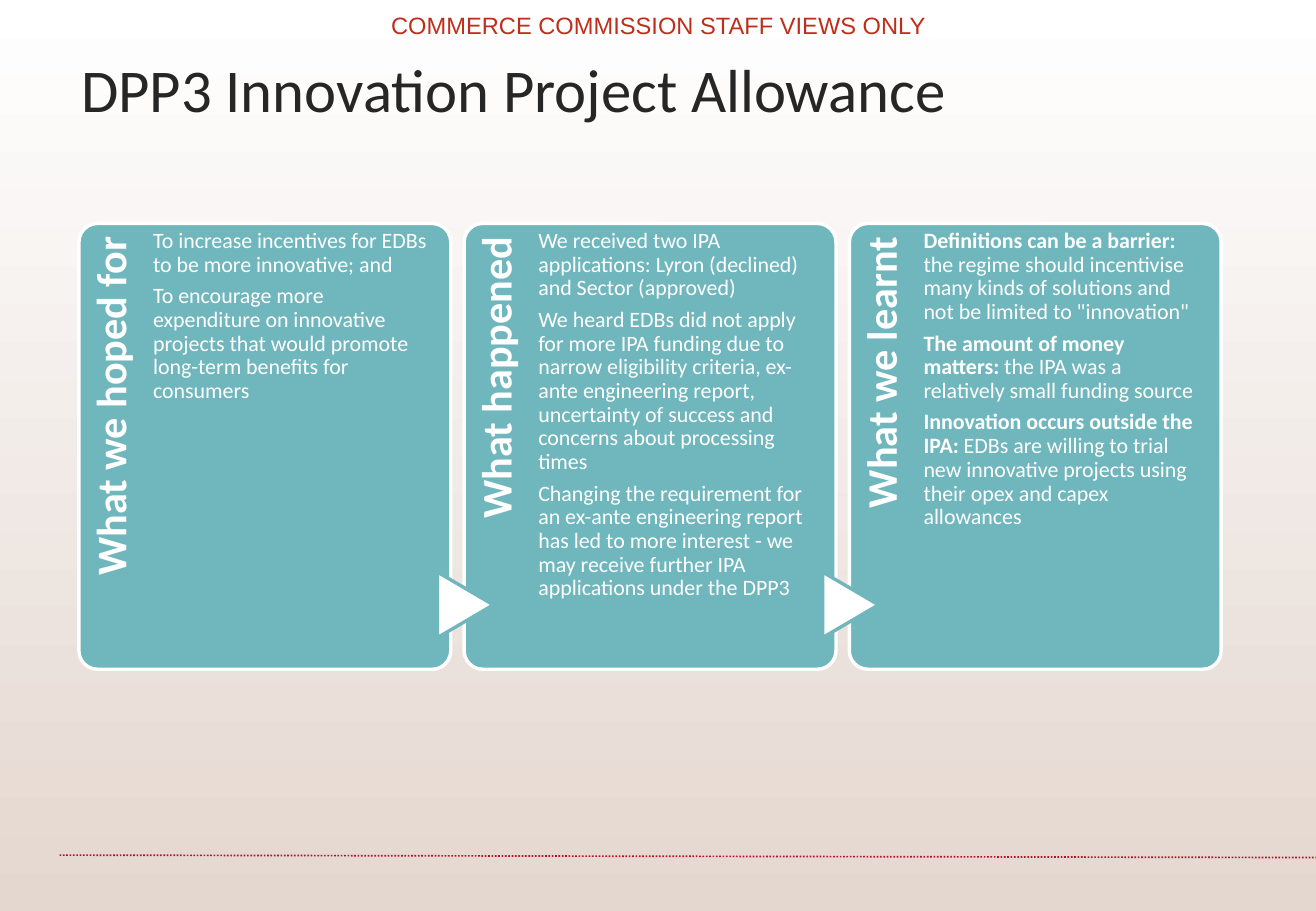
from lxml.etree import SubElement
from pptx import Presentation
from pptx.dml.color import RGBColor
from pptx.enum.dml import MSO_LINE
from pptx.enum.shapes import MSO_CONNECTOR, MSO_SHAPE
from pptx.enum.text import PP_ALIGN
from pptx.oxml.ns import qn
from pptx.util import Inches, Pt

WHITE = RGBColor(0xFF, 0xFF, 0xFF)
SAND = RGBColor(0xE4, 0xD7, 0xCF)
TEAL = RGBColor(0x70, 0xB6, 0xBD)
CRIMSON = RGBColor(0xBA, 0x0F, 0x2C)
RED = RGBColor(0xBF, 0x2E, 0x1A)
CHARCOAL = RGBColor(0x26, 0x26, 0x26)

CARD_LEFT, CARD_TOP, CARD_WIDTH, CARD_HEIGHT = 0.65, 1.84, 3.06, 3.67
CARD_PITCH = 3.17

# Each paragraph is a bold lead-in followed by plain text.
CARDS = [
    ("What we hoped for", [
        ("", "To increase incentives for EDBs to be more innovative; and"),
        ("", "To encourage more expenditure on innovative projects that would "
             "promote long-term benefits for consumers"),
    ]),
    ("What happened", [
        ("", "We received two IPA applications: Lyron (declined) and Sector (approved)"),
        ("", "We heard EDBs did not apply for more IPA funding due to narrow "
             "eligibility criteria, ex-ante engineering report, uncertainty of "
             "success and concerns about processing times"),
        ("", "Changing the requirement for an ex-ante engineering report has led to "
             "more interest - we may receive further IPA applications under the DPP3"),
    ]),
    ("What we learnt", [
        ("Definitions can be a barrier: ",
         "the regime should incentivise many kinds of solutions and not be "
         "limited to \"innovation\""),
        ("The amount of money matters: ",
         "the IPA was a relatively small funding source"),
        ("Innovation occurs outside the IPA: ",
         "EDBs are willing to trial new innovative projects using their opex "
         "and capex allowances"),
    ]),
]

deck = Presentation()
deck.slide_width, deck.slide_height = Inches(10.83), Inches(7.5)
page = deck.slides.add_slide(deck.slide_layouts[6])

backdrop = page.background.fill
backdrop.gradient()
backdrop.gradient_angle = 270
for stop, color in zip(backdrop.gradient_stops, (WHITE, SAND)):
    stop.color.rgb = color


def add_text(place, paragraphs, size, color, font="Calibri", align=PP_ALIGN.LEFT,
             spacing=1.0, after=0, insets=(0.1, 0.05, 0.1, 0.05)):
    """Add a text box; each paragraph is a (bold, plain) pair of strings."""
    box = page.shapes.add_textbox(*map(Inches, place))
    frame = box.text_frame
    frame.word_wrap = True
    (frame.margin_left, frame.margin_top,
     frame.margin_right, frame.margin_bottom) = map(Inches, insets)
    for number, parts in enumerate(paragraphs):
        para = frame.add_paragraph() if number else frame.paragraphs[0]
        para.alignment = align
        para.line_spacing = spacing
        para.space_after = Pt(after)
        for text, bold in zip(parts, (True, False)):
            if text:
                span = para.add_run()
                span.text = text
                span.font.name = font
                span.font.size = Pt(size)
                span.font.bold = bold
                span.font.color.rgb = color
    return box


def add_panel(kind, place, fill, line):
    panel = page.shapes.add_shape(kind, *map(Inches, place))
    panel.shadow.inherit = False
    panel.fill.solid()
    panel.fill.fore_color.rgb = fill
    panel.line.color.rgb = line
    panel.line.width = Pt(2)
    return panel


footer_rule = page.shapes.add_connector(
    MSO_CONNECTOR.STRAIGHT, Inches(0.49), Inches(7.04), Inches(10.83), Inches(7.06))
footer_rule.line.color.rgb = CRIMSON
footer_rule.line.width = Pt(1)
footer_rule.line.dash_style = MSO_LINE.ROUND_DOT
SubElement(footer_rule._element.spPr, qn("a:effectLst"))

add_text((0.57, 0.49, 7.8, 1.16), [("", "DPP3 Innovation Project Allowance")],
         36, CHARCOAL, spacing=0.7, insets=(0.1, 0.1, 0.1, 0.05))
add_text((2.31, 0.04, 6.22, 0.34), [("", "COMMERCE COMMISSION STAFF VIEWS ONLY")],
         14, RED, font="Arial", align=PP_ALIGN.CENTER)

for index, (heading, points) in enumerate(CARDS):
    left = CARD_LEFT + index * CARD_PITCH
    card = add_panel(MSO_SHAPE.ROUNDED_RECTANGLE,
                     (left, CARD_TOP, CARD_WIDTH, CARD_HEIGHT), TEAL, WHITE)
    card.adjustments[0] = 0.05
    side_heading = add_text((left - 1.2, 3.03, 3.01, 0.61), [(heading, "")], 25, WHITE,
                            align=PP_ALIGN.RIGHT, spacing=0.9,
                            insets=(0, 0.09, 0.12, 0))
    side_heading.rotation = 270
    if index:
        arrow = add_panel(MSO_SHAPE.FLOWCHART_EXTRACT,
                          (left - 0.26, 4.75, 0.54, 0.46), WHITE, TEAL)
        arrow.rotation = 90
    add_text((left + 0.61, CARD_TOP, 2.28, CARD_HEIGHT), points, 13, WHITE,
             spacing=0.9, after=4.55, insets=(0, 0.05, 0, 0))

deck.save("out.pptx")
